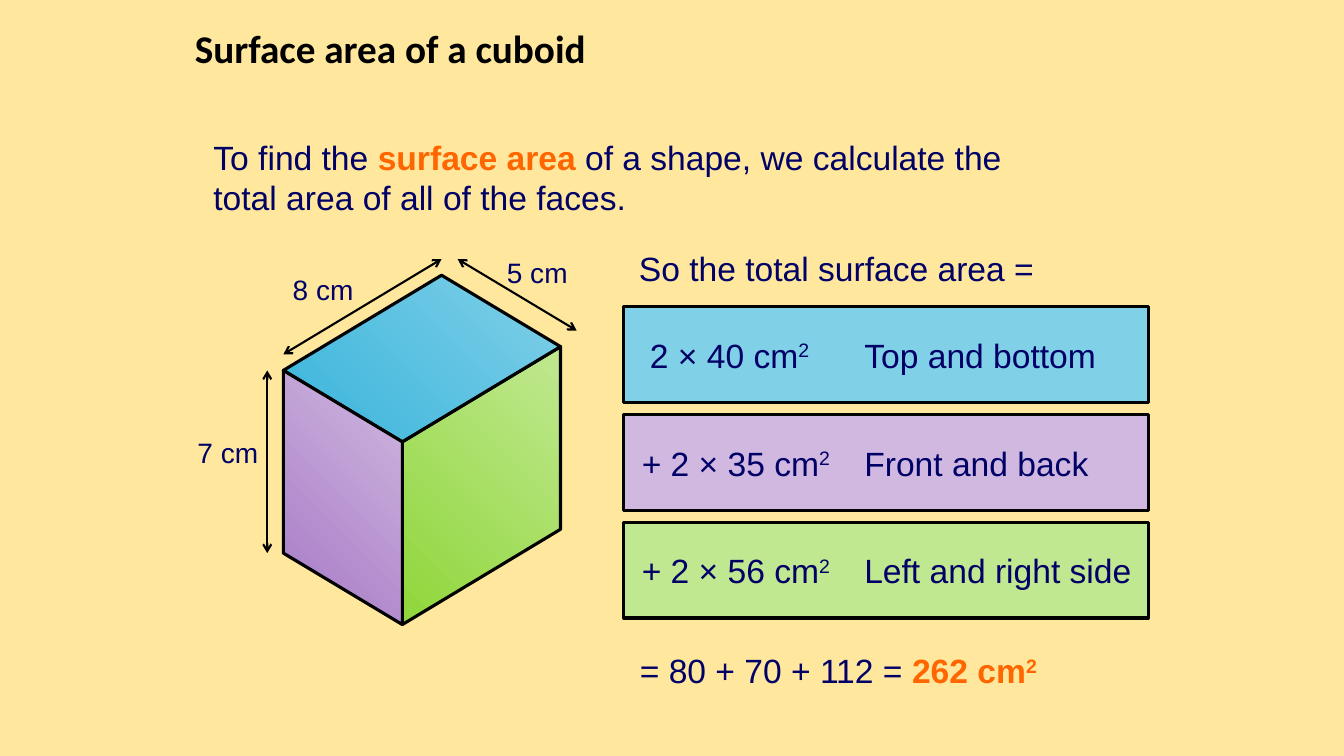
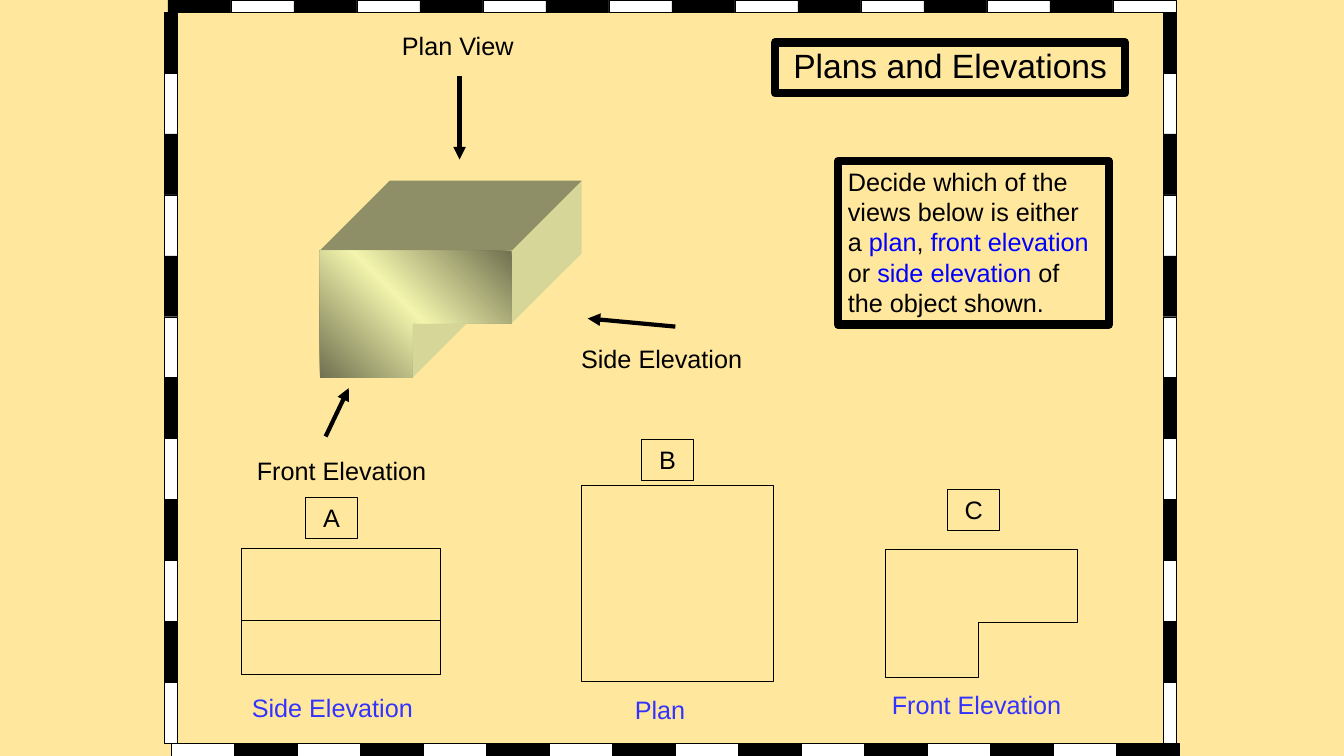
from copy import deepcopy
from dataclasses import dataclass
from typing import Optional

from lxml.etree import SubElement
from pptx import Presentation
from pptx.dml.color import RGBColor
from pptx.enum.shapes import MSO_CONNECTOR, MSO_SHAPE
from pptx.enum.text import MSO_ANCHOR, MSO_AUTO_SIZE, PP_ALIGN
from pptx.oxml.ns import qn
from pptx.util import Pt

CREAM = RGBColor(0xFF, 0xE7, 0x9E)
BLACK = RGBColor(0x00, 0x00, 0x00)
WHITE = RGBColor(0xFF, 0xFF, 0xFF)
NAVY = RGBColor(0x00, 0x00, 0x66)
ORANGE = RGBColor(0xFF, 0x66, 0x00)
BLUE = RGBColor(0x00, 0x00, 0xFF)
ANSWER_BLUE = RGBColor(0x33, 0x33, 0xFF)
SKY = RGBColor(0x80, 0xD0, 0xE8)
DEEP_SKY = RGBColor(0x39, 0xB4, 0xDB)
LILAC = RGBColor(0xD0, 0xB8, 0xE0)
DEEP_LILAC = RGBColor(0xA6, 0x79, 0xC5)
LIME = RGBColor(0xC0, 0xE8, 0x90)
DEEP_LIME = RGBColor(0x8F, 0xD6, 0x3A)
OLIVE = RGBColor(0x70, 0x71, 0x50)
OLIVE_TOP = RGBColor(0x8F, 0x8F, 0x67)
OLIVE_SIDE = RGBColor(0xD6, 0xD6, 0x98)
PALE_OLIVE = RGBColor(0xF3, 0xF5, 0xAD)


@dataclass
class Span:
    text: str
    color: Optional[RGBColor] = None
    bold: Optional[bool] = None
    raised: bool = False


def shift(point, *moves):
    return tuple(sum(values) for values in zip(point, *moves))


def parallelogram(corner, first, second):
    return [corner, shift(corner, first), shift(corner, first, second), shift(corner, second)]


def step_outline(left, top):
    return [(left + x, top + y) for x, y in
            [(0, 0), (137, 0), (137, 52), (66, 52), (66, 91), (0, 91)]]


class SlideMaker:
    def __init__(self):
        self.deck = Presentation()
        self.deck.slide_width, self.deck.slide_height = Pt(960), Pt(540)
        background = self.deck.slide_master.background.fill
        background.solid()
        background.fore_color.rgb = CREAM
        self.page = None

    def start(self):
        self.page = self.deck.slides.add_slide(self.deck.slide_layouts[5])

    def set_text(self, box, spans, size, color=BLACK, align=PP_ALIGN.LEFT,
                 font="Arial", bold=False, anchor=MSO_ANCHOR.TOP):
        frame = box.text_frame
        frame.word_wrap = True
        frame.auto_size = MSO_AUTO_SIZE.NONE
        frame.vertical_anchor = anchor
        para = frame.paragraphs[0]
        para.alignment = align
        para.font.name, para.font.size = font, Pt(size)
        agreed = all(part.color is None and part.bold is None for part in spans)
        if agreed:
            para.font.color.rgb = color
            para.font.bold = bold
        for part in spans:
            span = para.add_run()
            span.text = part.text
            if not agreed:
                span.font.color.rgb = part.color or color
                span.font.bold = bool(part.bold)
            if part.raised:
                span._r.get_or_add_rPr().set("baseline", "30000")
        return para

    def title(self, text, place, size, line=None, **style):
        box = self.page.shapes.title
        box.left, box.top, box.width, box.height = map(Pt, place)
        if line:
            self.paint(box, (), line)
        para = self.set_text(box, [Span(text)], size, anchor=MSO_ANCHOR.MIDDLE, **style)
        para.line_spacing = 0.9

    def text(self, content, left, top, width, size=18, height=36, color=BLACK):
        box = self.page.shapes.add_textbox(Pt(left), Pt(top), Pt(width), Pt(height))
        spans = [Span(content)] if isinstance(content, str) else content
        self.set_text(box, spans, size, color)

    def paint(self, shape, fills, line):
        if not fills:
            shape.fill.background()
        elif len(fills) == 1:
            shape.fill.solid()
            shape.fill.fore_color.rgb = fills[0]
        else:
            shape.fill.gradient()
            shape.fill.gradient_angle = 45
            stops = shape.element.spPr.find(qn("a:gradFill")).find(qn("a:gsLst"))
            for _ in fills[2:]:
                stops.append(deepcopy(stops[0]))
            for index, (stop, color) in enumerate(zip(shape.fill.gradient_stops, fills)):
                stop.position = index / (len(fills) - 1)
                stop.color.rgb = color
        if line:
            shape.line.color.rgb = BLACK
            shape.line.width = Pt(line)
        else:
            shape.line.fill.background()

    def rectangle(self, left, top, width, height, fills=(), line=0.75):
        box = self.page.shapes.add_shape(
            MSO_SHAPE.RECTANGLE, Pt(left), Pt(top), Pt(width), Pt(height))
        box.shadow.inherit = False
        self.paint(box, fills, line)
        return box

    def polygon(self, points, fills=(), line=None):
        corners = [(Pt(x), Pt(y)) for x, y in points]
        builder = self.page.shapes.build_freeform(*corners[0])
        builder.add_line_segments(corners[1:], close=True)
        shape = builder.convert_to_shape()
        shape.shadow.inherit = False
        self.paint(shape, fills, line)

    def line(self, start, end, width, head=None, tail=None):
        connector = self.page.shapes.add_connector(
            MSO_CONNECTOR.STRAIGHT, *map(Pt, (*start, *end)))
        connector.line.color.rgb = BLACK
        connector.line.width = Pt(width)
        properties = connector.element.spPr
        outline = properties.find(qn("a:ln"))
        for tag, kind in (("a:headEnd", head), ("a:tailEnd", tail)):
            if kind:
                SubElement(outline, qn(tag)).set("type", kind)
        SubElement(properties, qn("a:effectLst"))

    def tiles(self, left, top, width, height, count, across, colors):
        for index in range(count):
            x = left + index * width if across else left
            y = top if across else top + index * height
            self.rectangle(x, y, width, height, [colors[index % 2]], 0.25)


def surface_area(maker):
    maker.start()
    maker.title("Surface area of a cuboid", (132, 11.5, 473, 50), 28,
                font="Calibri", bold=True)
    maker.text([Span("To find the "), Span("surface area", ORANGE, True),
                Span(" of a shape, we calculate the total area of all of the faces.")],
               145.4, 94.3, 621, 24, 66, NAVY)
    maker.text("So the total surface area =", 449.3, 173.5, 326, 24, color=NAVY)

    apex, length, depth, height = (315.4, 196.6), (-113, 68), (85, 51), (0, 130.5)
    left, right = shift(apex, length), shift(apex, depth)
    faces = [(right, length, height, (DEEP_LIME, LIME)),
             (apex, length, depth, (DEEP_SKY, SKY)),
             (left, depth, height, (DEEP_LILAC, LILAC))]
    for corner, first, second, fills in faces:
        maker.polygon(parallelogram(corner, first, second), fills, 2.25)

    dimensions = [(apex, depth, (11.5, -11.5), "5 cm", 355, 179.3),
                  (apex, length, (0, -11.5), "8 cm", 202, 190.8),
                  (left, height, (-11.5, 0), "7 cm", 134, 307.8)]
    for corner, edge, gap, label, x, y in dimensions:
        start = shift(corner, gap)
        maker.line(start, shift(start, edge), 1.5, "arrow", "arrow")
        maker.text(label, x, y, 64, 20, 31, NAVY)

    rows = [("2 × 40 cm", 457.2, "Top and bottom", SKY),
            ("+ 2 × 35 cm", 451.4, "Front and back", LILAC),
            ("+ 2 × 56 cm", 451.4, "Left and right side", LIME)]
    for index, (area, x, name, color) in enumerate(rows):
        top = 218.9 + index * 77.1
        maker.rectangle(445.7, top, 374.5, 68.4, [color], 2.25)
        maker.text([Span(area), Span("2", raised=True)], x, top + 16.5, 158, 24, color=NAVY)
        maker.text(name, 610.3, top + 16.5, 212, 24, color=NAVY)
    maker.text([Span("= 80 + 70 + 112 = "), Span("262 cm", ORANGE, True),
                Span("2", ORANGE, True, True)], 450, 460.8, 310, 24, color=NAVY)


def plans_and_elevations(maker):
    maker.start()
    maker.title("Plans and Elevations", (553.7, 30.3, 250, 36.3), 24, 6,
                align=PP_ALIGN.CENTER)
    task = maker.rectangle(598.6, 115.2, 193.5, 116.6, line=6)
    maker.set_text(task, [Span("Decide which of the views below is either a "),
                          Span("plan", BLUE), Span(", "), Span("front elevation", BLUE),
                          Span(" or "), Span("side elevation", BLUE),
                          Span(" of the object shown.")], 18)

    x, y, back = 228.5, 179, (50, -50)
    solid = [((x + 66, y + 52), (0, 39), OLIVE_SIDE),
             ((x + 137, y), (0, 52), OLIVE_SIDE),
             ((x, y), (137, 0), OLIVE_TOP)]
    for corner, edge, color in solid:
        maker.polygon(parallelogram(corner, edge, back), [color])
    maker.polygon(step_outline(x, y), (OLIVE, PALE_OLIVE, OLIVE))

    directions = [("Plan View", 280, 18, (328.3, 54.5), (328.3, 114)),
                  ("Side Elevation", 408, 242, (482.4, 233.3), (419.8, 227.5)),
                  ("Front Elevation", 176.4, 322, (232.6, 311.8), (249.1, 277.2))]
    for label, left, top, start, end in directions:
        maker.text(label, left, top, 140, height=29)
        maker.line(start, end, 3, tail="triangle")

    maker.rectangle(172.8, 391.7, 141.8, 90.3)
    maker.line((172.8, 443.3), (314.6, 443.3), 0.75)
    maker.rectangle(415.4, 346.7, 137, 140)
    maker.polygon(step_outline(632.5, 392.4), line=0.25)
    views = [("A", 218, 355.5, "Side Elevation", 172.8, 491.2),
             ("B", 458, 313.8, "Plan", 446.4, 492.6),
             ("C", 676.8, 349.7, "Front Elevation", 630, 488.7)]
    for letter, left, top, answer, answer_left, answer_top in views:
        tag = maker.rectangle(left, top, 37.5, 29.5)
        maker.set_text(tag, [Span(letter)], 18, align=PP_ALIGN.CENTER)
        maker.text(answer, answer_left, answer_top, 160, height=29, color=ANSWER_BLUE)

    dark_first, light_first = (BLACK, WHITE), (WHITE, BLACK)
    maker.tiles(120, 0, 45, 9, 16, True, dark_first)
    maker.tiles(122.4, 531, 45, 9, 16, True, light_first)
    for left in (117.5, 831):
        maker.tiles(left, 8.7, 9, 43.5, 12, False, dark_first)


def main():
    maker = SlideMaker()
    surface_area(maker)
    plans_and_elevations(maker)
    maker.deck.save("out.pptx")


if __name__ == "__main__":
    main()
